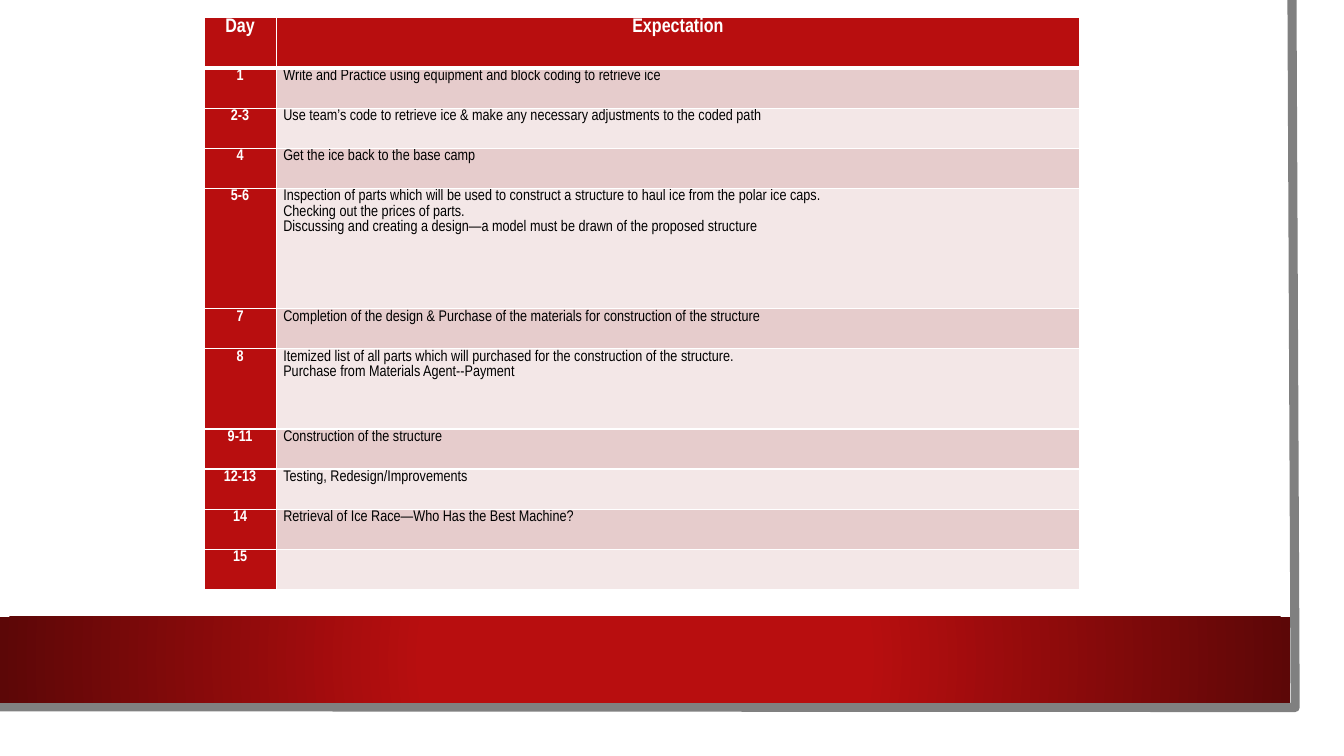
from lxml import etree
from pptx import Presentation
from pptx import util as u
from pptx.dml.color import RGBColor
from pptx.enum import shapes, text
from pptx.oxml import ns

WHITE = RGBColor(0xFF, 0xFF, 0xFF)
BLACK = RGBColor(0, 0, 0)
GREY = RGBColor(0x80, 0x80, 0x80)
RED = RGBColor(0xB8, 0x0E, 0x0F)
DARK_RED = RGBColor(0x5C, 0x07, 0x07)
ROSE = RGBColor(0xE6, 0xCC, 0xCC)
PALE_ROSE = RGBColor(0xF3, 0xE7, 0xE7)

HEADINGS = ("Day", ["Expectation"])
SCHEDULE = [
    ("1", ["Write and Practice using equipment and block coding to retrieve ice"]),
    ("2-3", ["Use team’s code to retrieve ice & make any necessary adjustments to the coded path"]),
    ("4", ["Get the ice back to the base camp"]),
    ("5-6", [
        "Inspection of parts which will be used to construct a structure to haul ice from the polar ice caps.",
        "Checking out the prices of parts.",
        "Discussing and creating a design—a model must be drawn of the proposed structure",
    ]),
    ("7", ["Completion of the design & Purchase of the materials for construction of the structure"]),
    ("8", [
        "Itemized list of all parts which will purchased for the construction of the structure.",
        "Purchase from Materials Agent--Payment",
    ]),
    ("9-11", ["Construction of the structure"]),
    ("12-13", ["Testing, Redesign/Improvements"]),
    ("14", ["Retrieval of Ice Race—Who Has the Best Machine?"]),
    ("15", [""]),
]


def apply(target, values):
    for name, value in values.items():
        setattr(target, name, value)


class SlideBuilder:
    font = "Arial Narrow"
    header_height = 1.29
    line_height = 1.01
    margins = {
        "margin_left": u.Cm(0.18), "margin_right": u.Cm(0.18),
        "margin_top": 0, "margin_bottom": 0,
    }

    def __init__(self, slide):
        self.slide = slide

    def panel(self, left, top, width, height, color):
        panel = self.slide.shapes.add_shape(
            shapes.MSO_SHAPE.RECTANGLE, *map(u.Cm, (left, top, width, height)))
        panel.shadow.inherit = False
        panel.fill.solid()
        panel.fill.fore_color.rgb = color
        panel.line.fill.background()
        return panel

    def glowing_band(self, left, top, width, height, inner, outer):
        band = self.panel(left, top, width, height, inner)
        properties = band._element.spPr
        solid = properties.find(ns.qn("a:solidFill"))
        gradient = etree.fromstring(
            f'<a:gradFill {ns.nsdecls("a")} rotWithShape="1"><a:gsLst>'
            f'<a:gs pos="34000"><a:srgbClr val="{inner}"/></a:gs>'
            f'<a:gs pos="100000"><a:srgbClr val="{outer}"/></a:gs></a:gsLst>'
            '<a:path path="circle"><a:fillToRect l="50000" t="50000" r="50000" b="50000"/>'
            '</a:path></a:gradFill>')
        properties.replace(solid, gradient)

    def outline(self, points, color, weight):
        start, *rest = [(u.Cm(x), u.Cm(y)) for x, y in points]
        builder = self.slide.shapes.build_freeform(*start)
        builder.add_line_segments(rest, close=False)
        edge = builder.convert_to_shape()
        edge.shadow.inherit = False
        edge.fill.background()
        edge.line.color.rgb = color
        edge.line.width = u.Pt(weight)

    def borders(self, cell, **weights):
        properties = cell._tc.get_or_add_tcPr()
        for side in "LRTB":
            line = etree.SubElement(
                properties, ns.qn(f"a:ln{side}"), w=str(u.Pt(weights.get(side, 1))))
            fill = etree.SubElement(line, ns.qn("a:solidFill"))
            etree.SubElement(fill, ns.qn("a:srgbClr"), val=str(WHITE))

    def cell(self, cell, lines, fill, centered, font, **weights):
        apply(cell, self.margins)
        self.borders(cell, **weights)
        cell.fill.solid()
        cell.fill.fore_color.rgb = fill
        cell.text = "\n".join(lines)
        align = text.PP_ALIGN.CENTER if centered else text.PP_ALIGN.LEFT
        for paragraph in cell.text_frame.paragraphs:
            apply(paragraph, {"alignment": align, "line_spacing": 1.07})
            apply(paragraph.font, {"name": self.font, "size": u.Pt(font["size"]),
                                   "bold": font["bold"]})
            paragraph.font.color.rgb = font["color"]

    def schedule(self, left, top, widths, headings, entries):
        heights = [self.header_height] + [self.line_height * len(e[1]) for e in entries]
        table = self.slide.shapes.add_table(
            len(heights), len(widths), u.Cm(left), u.Cm(top),
            u.Cm(sum(widths)), u.Cm(sum(heights))).table
        for column, width in zip(table.columns, widths):
            column.width = u.Cm(width)
        for index, (day, lines) in enumerate([headings, *entries]):
            table.rows[index].height = u.Cm(heights[index])
            is_header = index == 0
            weights = {0: {"B": 3}, 1: {"T": 3}}.get(index, {})
            strong = {"size": 14 if is_header else 11, "bold": True, "color": WHITE}
            plain = {"size": 11, "bold": False, "color": BLACK}
            stripe = ROSE if index % 2 else PALE_ROSE
            self.cell(table.cell(index, 0), [day], RED, True, strong, **weights)
            self.cell(table.cell(index, 1), lines, RED if is_header else stripe,
                      is_header, strong if is_header else plain, **weights)


def main():
    deck = Presentation()
    apply(deck, {"slide_width": u.Cm(33.87), "slide_height": u.Cm(19.05)})
    page = SlideBuilder(deck.slides.add_slide(deck.slide_layouts[6]))
    page.panel(0, 0, 33.27, 18.47, WHITE)
    page.outline([(32.56, 0), (32.64, 17.83), (-0.08, 17.81)], GREY, 6.5)
    page.glowing_band(0, 15.54, 32.51, 2.17, RED, DARK_RED)
    page.schedule(5.14, 0.43, [1.82, 20.25], HEADINGS, SCHEDULE)
    deck.save("out.pptx")


if __name__ == "__main__":
    main()
